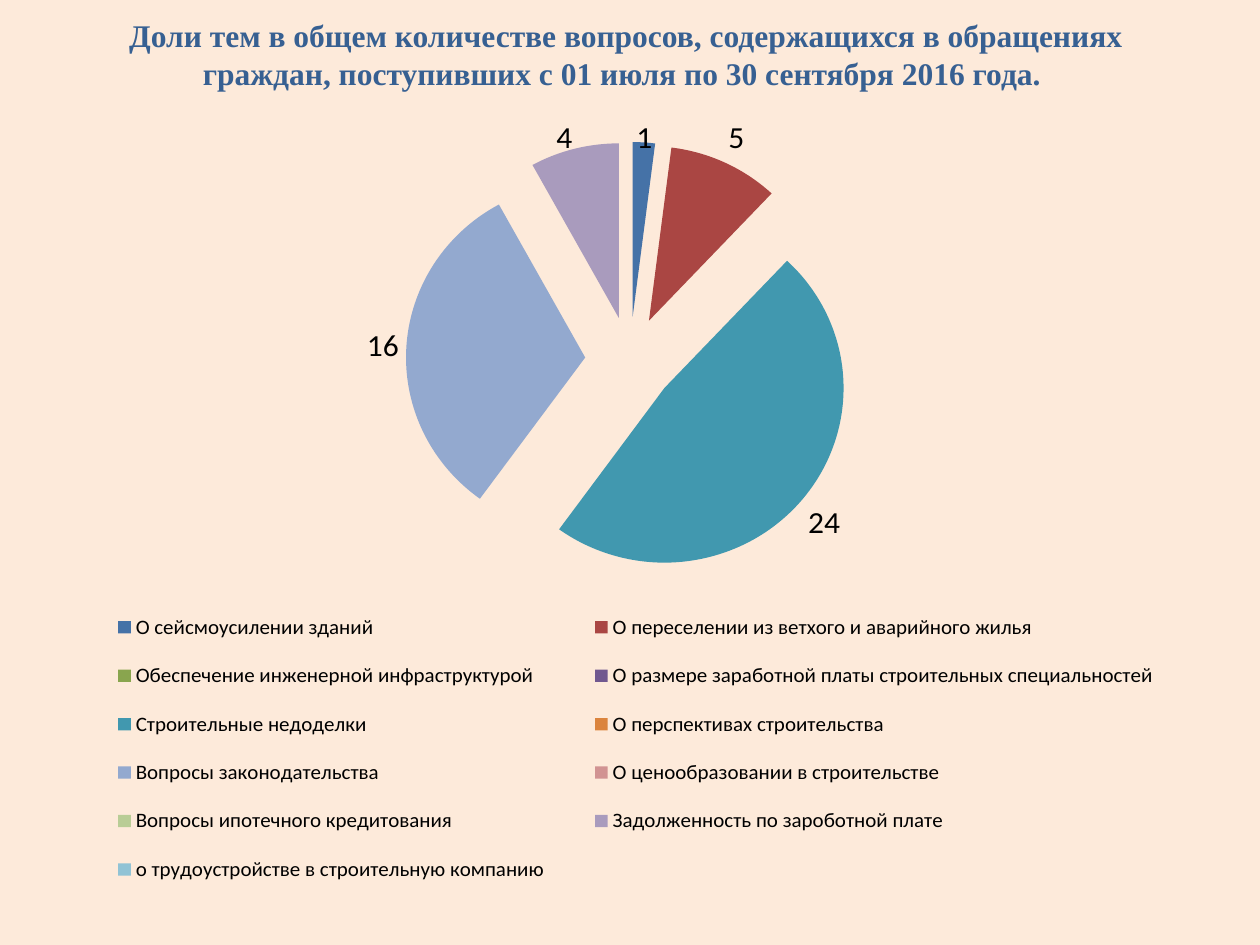
"""Build the slide with shares of topics in citizens' appeals."""
from lxml import etree
from pptx import Presentation
from pptx import util as u
from pptx.chart.data import CategoryChartData
from pptx.dml.color import RGBColor
from pptx.enum import chart as charts
from pptx.enum import text
from pptx.oxml.ns import qn

PX = 914400 // 126
CHART_HEIGHT = 808
COLORS = {"background": "FDEADA", "title": "376092", "text": "000000"}
TOPICS = [
    ("О сейсмоусилении зданий", 1, "4572A7"),
    ("О переселении из ветхого и аварийного жилья", 5, "AA4643"),
    ("Обеспечение инженерной инфраструктурой", 0, "89A54E"),
    ("О размере заработной платы строительных специальностей", 0, "71588F"),
    ("Строительные недоделки", 24, "4198AF"),
    ("О перспективах строительства", 0, "DB843D"),
    ("Вопросы законодательства", 16, "93A9CF"),
    ("О ценообразовании в строительстве", 0, "D19392"),
    ("Вопросы ипотечного кредитования", 0, "B9CD96"),
    ("Задолженность по зароботной плате", 4, "A99BBD"),
    ("о трудоустройстве в строительную компанию", 0, "91C3D5"),
]


def box(left, top, width, height):
    return [u.Emu(length * PX) for length in (left, top, width, height)]


def set_layout(parent, index, **values):
    for old in parent.findall(qn("c:layout")):
        parent.remove(old)
    layout = etree.Element(qn("c:layout"))
    manual = etree.SubElement(layout, qn("c:manualLayout"))
    for tag, value in values.items():
        etree.SubElement(manual, qn(f"c:{tag}")).set("val", str(value))
    parent.insert(index, layout)


presentation = Presentation()
presentation.slide_width = u.Inches(10)
presentation.slide_height = u.Inches(7.5)
slide = presentation.slides.add_slide(presentation.slide_layouts[6])
slide.background.fill.solid()
slide.background.fill.fore_color.rgb = RGBColor.from_string(COLORS["background"])

title = slide.shapes.add_textbox(*box(59, 0, 1134, 108))
title.text_frame.word_wrap = True
title.text_frame.vertical_anchor = text.MSO_ANCHOR.MIDDLE
paragraph = title.text_frame.paragraphs[0]
paragraph.text = (
    "Доли тем в общем количестве вопросов, содержащихся в обращениях "
    "граждан, поступивших с 01 июля по 30 сентября 2016 года. "
)
paragraph.alignment = text.PP_ALIGN.CENTER
paragraph.font.name = "Times New Roman"
paragraph.font.size = u.Pt(18)
paragraph.font.bold = True
paragraph.font.color.rgb = RGBColor.from_string(COLORS["title"])

data = CategoryChartData()
data.categories = [name for name, count, color in TOPICS]
data.add_series("Series 1", [count for name, count, color in TOPICS])
chart = slide.shapes.add_chart(
    charts.XL_CHART_TYPE.PIE, *box(63, 98, 1134, CHART_HEIGHT), data
).chart
chart.has_title = False
chart.font.name = "Calibri"
chart.font.size = u.Pt(18)
chart.font.color.rgb = RGBColor.from_string(COLORS["text"])

plot = chart.plots[0]
plot.vary_by_categories = True
plot.has_data_labels = True
labels = plot.data_labels
labels.show_value = True
labels.show_percentage = False
labels.number_format = "0;;;"
labels.number_format_is_linked = False
labels.position = charts.XL_LABEL_POSITION.OUTSIDE_END

series = plot.series[0]
for index, (name, count, color) in enumerate(TOPICS):
    fill = series.points[index].format.fill
    fill.solid()
    fill.fore_color.rgb = RGBColor.from_string(color)
explosion = etree.Element(qn("c:explosion"))
explosion.set("val", "25")
series._element.find(qn("c:dPt")).addprevious(explosion)

chart.has_legend = True
legend = chart.legend
legend.position = charts.XL_LEGEND_POSITION.BOTTOM
legend.include_in_layout = False
legend.font.name = "Calibri"
legend.font.size = u.Pt(12)
legend.font.color.rgb = RGBColor.from_string(COLORS["text"])

plot_area = chart._chartSpace.chart.plotArea
set_layout(plot_area, 0, layoutTarget="inner", xMode="edge", yMode="edge",
           x=0, y=24 / CHART_HEIGHT, w=1, h=448 / CHART_HEIGHT)
set_layout(legend._element, 1, xMode="edge", yMode="edge",
           x=0.01, y=0.6, w=0.99, h=0.4)

presentation.save("out.pptx")
